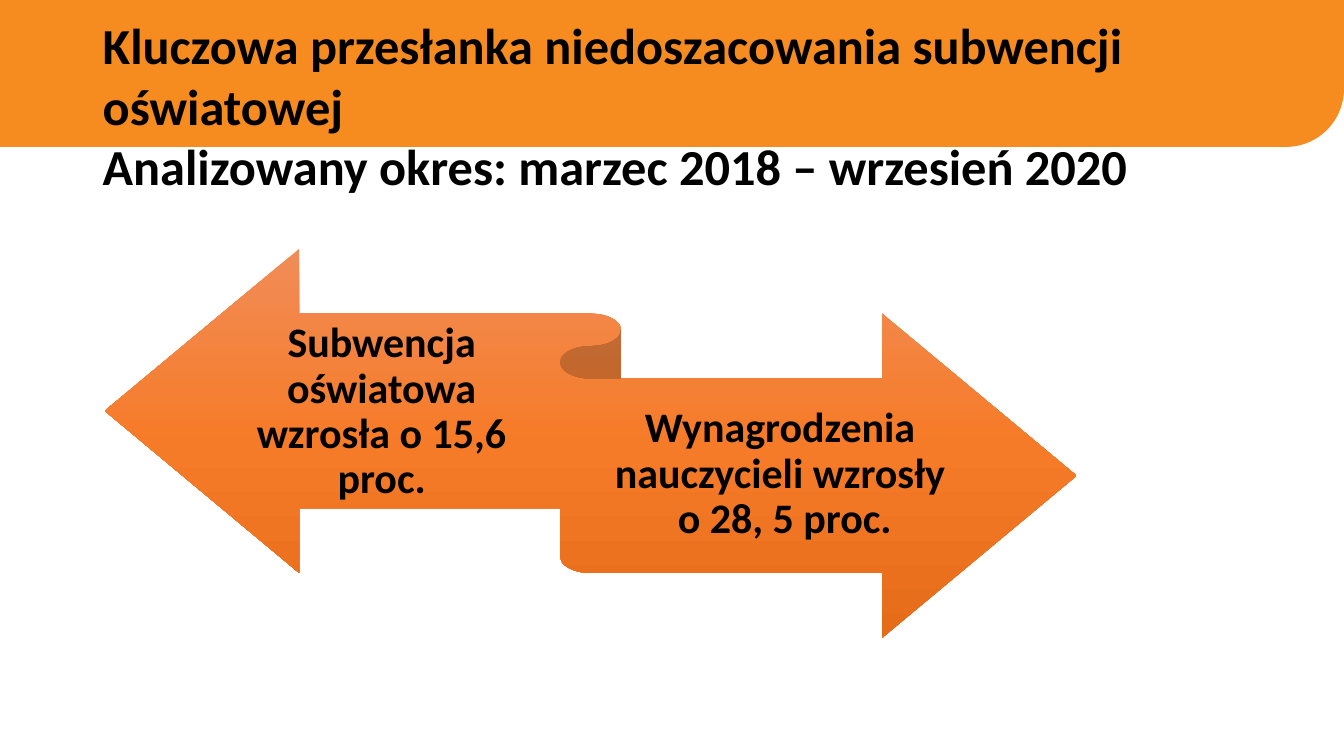
from copy import deepcopy

from pptx import Presentation
from pptx.dml.color import RGBColor
from pptx.enum.shapes import MSO_SHAPE
from pptx.enum.text import MSO_ANCHOR, MSO_AUTO_SIZE, PP_ALIGN
from pptx.oxml.ns import qn
from pptx.util import Pt

BAND = MSO_SHAPE.ROUND_1_RECTANGLE
RIBBON = MSO_SHAPE.LEFT_RIGHT_RIBBON
TOP, MIDDLE = MSO_ANCHOR.TOP, MSO_ANCHOR.MIDDLE
LEFT, CENTER = PP_ALIGN.LEFT, PP_ALIGN.CENTER
NO_AUTOFIT = MSO_AUTO_SIZE.NONE

BLACK = RGBColor(0x00, 0x00, 0x00)
ORANGE = RGBColor(0xF6, 0x8B, 0x1F)
RIBBON_STOPS = (
    (0, RGBColor(0xF1, 0x8C, 0x57)),
    (0.5, RGBColor(0xF6, 0x7B, 0x28)),
    (1, RGBColor(0xE5, 0x6C, 0x19)),
)
FONT = "Calibri"

TITLE = (
    "Kluczowa przesłanka niedoszacowania subwencji oświatowej",
    "Analizowany okres: marzec 2018 – wrzesień 2020",
)
ARROW_LABELS = (
    ("Subwencja oświatowa wzrosła o 15,6 proc.", 0.12, 0.175, 0.33),
    ("Wynagrodzenia nauczycieli wzrosły\v o 28, 5 proc.", 0.5, 0.335, 0.39),
)
LABEL_HEIGHT = 0.49


def write(tf, paragraphs, size, align, anchor, inset_x, inset_y, spacing=1.0):
    tf.word_wrap = True
    tf.auto_size = NO_AUTOFIT
    tf.vertical_anchor = anchor
    tf.margin_left = tf.margin_right = Pt(inset_x)
    tf.margin_top = tf.margin_bottom = Pt(inset_y)
    for i, text in enumerate(paragraphs):
        p = tf.add_paragraph() if i else tf.paragraphs[0]
        p.text = text
        p.alignment = align
        p.line_spacing = spacing
        for r in p.runs:
            r.font.name = FONT
            r.font.size = Pt(size)
            r.font.bold = True
            r.font.color.rgb = BLACK


def add_plain_shape(s, kind, x, y, w, h):
    sp = s.shapes.add_shape(kind, Pt(x), Pt(y), Pt(w), Pt(h))
    sp.shadow.inherit = False
    sp.line.fill.background()
    return sp


def add_header(s, x, y, w, h):
    band = add_plain_shape(s, BAND, x, y, w, h)
    band.adjustments[0] = 0.395
    band.element.spPr.get_or_add_xfrm().set("flipV", "1")
    band.fill.solid()
    band.fill.fore_color.rgb = ORANGE

    title = s.shapes.title
    title.left, title.top = Pt(x + 66.2), Pt(y + 6.5)
    title.width, title.height = Pt(w - 83), Pt(h - 10.8)
    write(title.text_frame, TITLE, size=36, align=LEFT, anchor=TOP,
          inset_x=7.2, inset_y=3.6)
    band.element.addnext(title.element)


def add_ribbon(s, x, y, w, h):
    ribbon = add_plain_shape(s, RIBBON, x, y, w, h)
    fill = ribbon.fill
    fill.gradient()
    fill.gradient_angle = 270
    stops = ribbon.element.spPr.find(".//" + qn("a:gsLst"))
    stops.insert(1, deepcopy(stops[0]))
    for stop, (position, color) in zip(fill.gradient_stops, RIBBON_STOPS):
        stop.position = position
        stop.color.rgb = color

    for text, dx, dy, width in ARROW_LABELS:
        label = s.shapes.add_textbox(Pt(x + dx * w), Pt(y + dy * h),
                                     Pt(width * w), Pt(LABEL_HEIGHT * h))
        write(label.text_frame, [text], size=30, align=CENTER, anchor=MIDDLE,
              inset_x=0, inset_y=8.6, spacing=0.9)


def main():
    prs = Presentation()
    prs.slide_width, prs.slide_height = Pt(960), Pt(540)
    s = prs.slides.add_slide(prs.slide_layouts[5])
    add_header(s, 0, 0, 960, 105)
    add_ribbon(s, 74.8, 177.8, 694.2, 277.8)
    prs.save("out.pptx")


if __name__ == "__main__":
    main()
